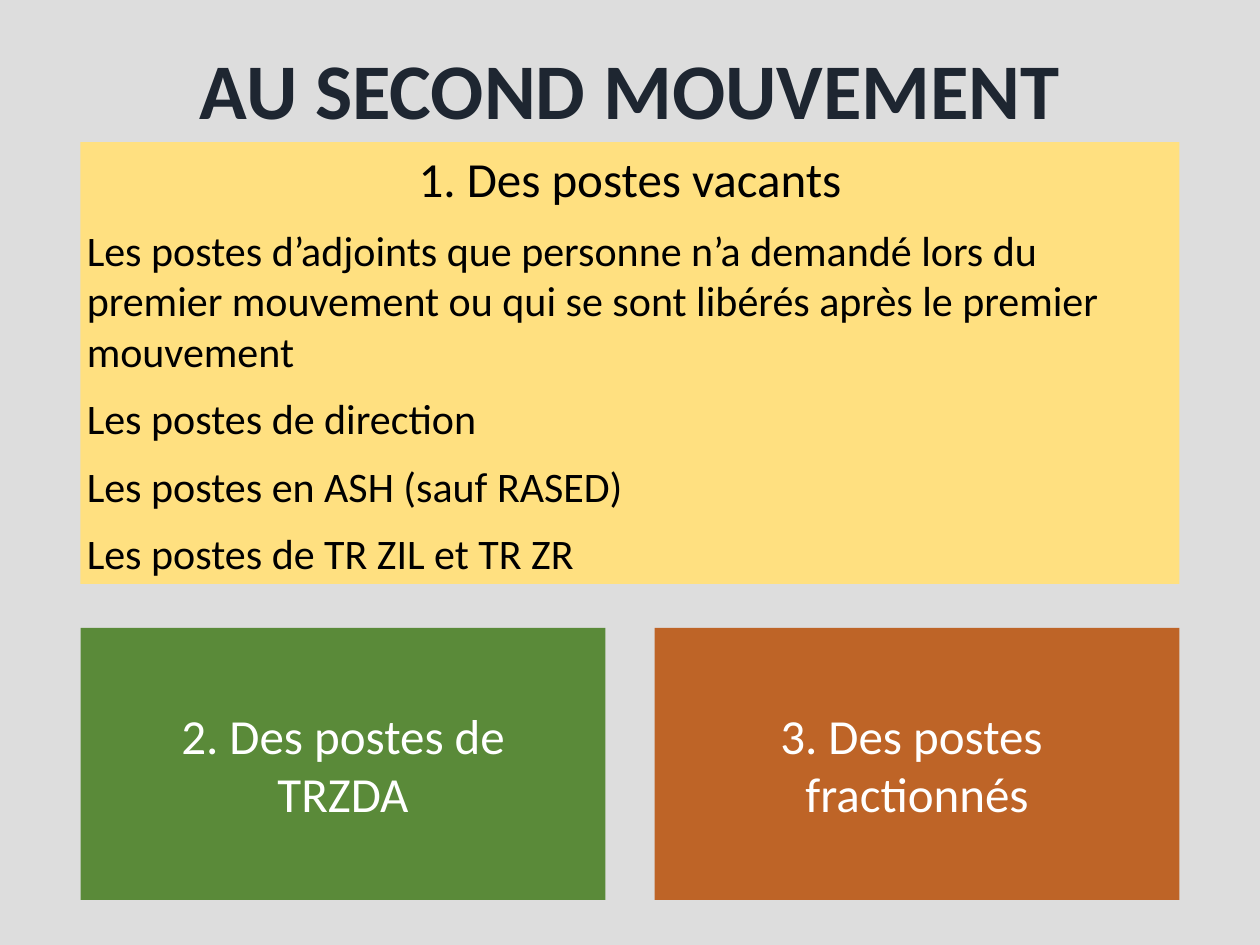
import pptx
import pptx.util
import pptx.dml.color
import pptx.enum.shapes
import pptx.enum.text

Pt = pptx.util.Pt
ALIGN = pptx.enum.text.PP_ALIGN
ANCHOR = pptx.enum.text.MSO_ANCHOR

FONT = "Calibri"
TITLE = "AU SECOND MOUVEMENT"
VACANT_HEADING = "1. Des postes vacants"
VACANT_ITEMS = [
    "Les postes d’adjoints que personne n’a demandé lors du premier mouvement "
    "ou qui se sont libérés après le premier mouvement",
    "Les postes de direction",
    "Les postes en ASH (sauf RASED)",
    "Les postes de TR ZIL et TR\u00a0ZR",
]
LOWER_BOXES = [
    (["2. Des postes de", "TRZDA"], "5A8A39"),
    (["3. Des postes ", "fractionnés"], "BE6427"),
]

LEFT, WIDTH = 46, 628
VACANT_TOP, VACANT_HEIGHT = 81.3, 252.4
LOWER_TOP, LOWER_WIDTH, LOWER_HEIGHT = 358.8, 300, 155.5
ITEM_GAP = 9.76


def rgb(value):
    return pptx.dml.color.RGBColor.from_string(value)


def set_frame(tf, anchor):
    tf.word_wrap = True
    tf.vertical_anchor = anchor
    tf.margin_left = tf.margin_right = tf.margin_top = tf.margin_bottom = Pt(3.6)


def add_line(tf, text, size, color, align=ALIGN.CENTER, before=0, bold=False):
    """Fill the first paragraph while it is empty, otherwise append one."""
    p = tf.paragraphs[0] if not tf.text else tf.add_paragraph()
    p.alignment = align
    if before:
        p.space_before = Pt(before)
    r = p.add_run()
    r.text = text
    r.font.name = FONT
    r.font.size = Pt(size)
    r.font.bold = bold
    r.font.color.rgb = rgb(color)
    return p


def add_box(s, left, top, width, height, fill, anchor):
    sp = s.shapes.add_shape(pptx.enum.shapes.MSO_SHAPE.RECTANGLE,
                            Pt(left), Pt(top), Pt(width), Pt(height))
    sp.shadow.inherit = False
    sp.fill.solid()
    sp.fill.fore_color.rgb = rgb(fill)
    sp.line.fill.background()
    set_frame(sp.text_frame, anchor)
    return sp.text_frame


def main():
    prs = pptx.Presentation()
    prs.slide_width, prs.slide_height = Pt(720), Pt(540)
    s = prs.slides.add_slide(prs.slide_layouts[6])
    s.background.fill.solid()
    s.background.fill.fore_color.rgb = rgb("DDDDDD")

    tf = s.shapes.add_textbox(Pt(LEFT), Pt(11.5), Pt(WIDTH), Pt(69.8)).text_frame
    set_frame(tf, ANCHOR.BOTTOM)
    add_line(tf, TITLE, 45, "1E2631", bold=True).line_spacing = 0.9

    tf = add_box(s, LEFT, VACANT_TOP, WIDTH, VACANT_HEIGHT, "FFE080", ANCHOR.TOP)
    add_line(tf, VACANT_HEADING, 28, "000000")
    for item in VACANT_ITEMS:
        add_line(tf, item, 24, "000000", ALIGN.LEFT, ITEM_GAP)

    step = WIDTH - LOWER_WIDTH
    for i, (lines, fill) in enumerate(LOWER_BOXES):
        tf = add_box(s, LEFT + i * step, LOWER_TOP, LOWER_WIDTH, LOWER_HEIGHT,
                     fill, ANCHOR.MIDDLE)
        for line in lines:
            add_line(tf, line, 28, "FFFFFF")

    prs.save("out.pptx")


if __name__ == "__main__":
    main()
